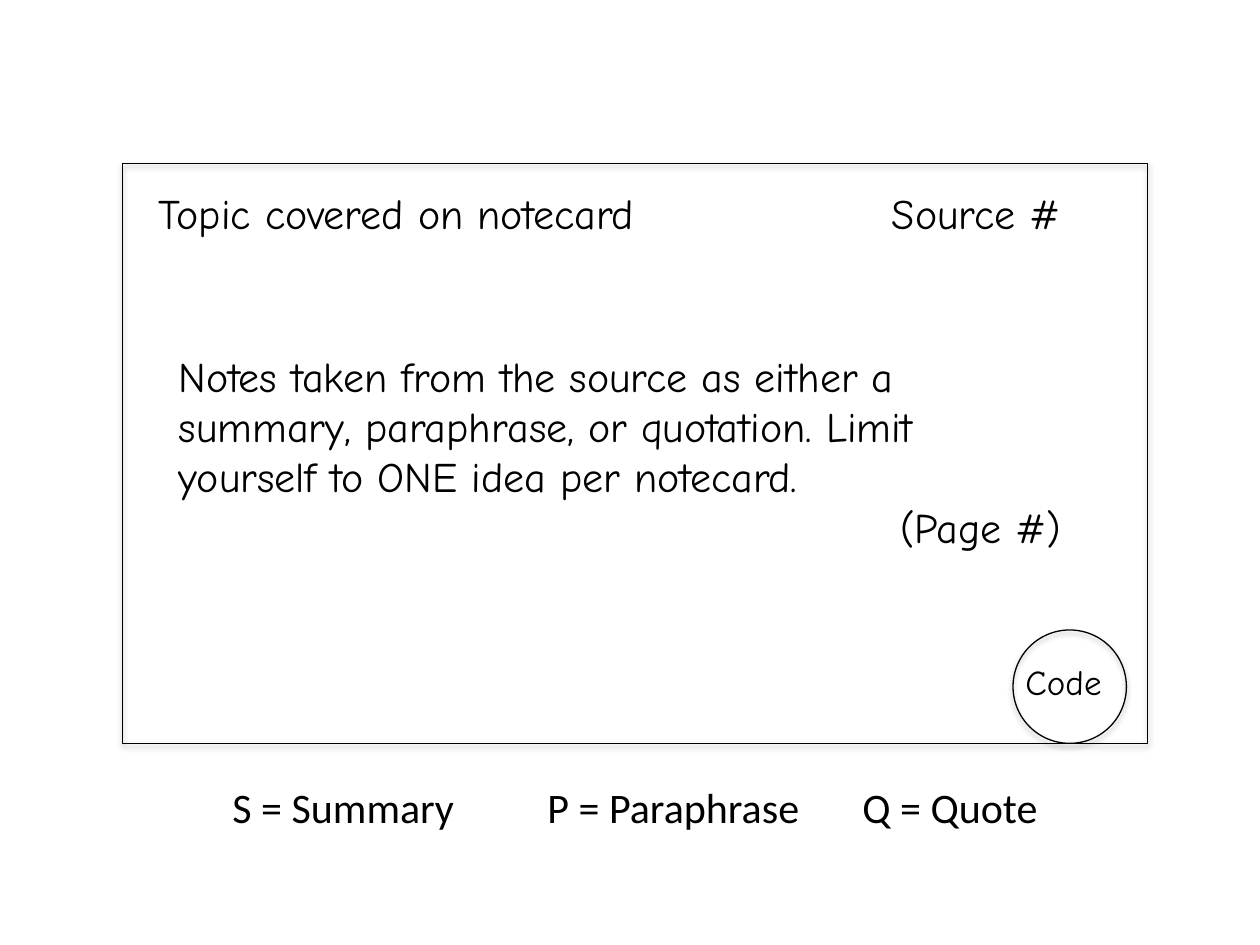
from dataclasses import dataclass

from lxml import etree
from pptx import Presentation
from pptx import util as u
from pptx.dml.color import RGBColor
from pptx.enum import shapes, text
from pptx.oxml import ns


@dataclass(frozen=True)
class Theme:
    ink: RGBColor = RGBColor(0, 0, 0)
    hand_font: str = "Comic Neue"
    legend_font: str = "Calibri"
    body_size: int = 24
    code_size: int = 20
    line_width: float = 0.75
    shadow_blur: float = 3.1
    shadow_distance: float = 1.8
    shadow_angle: int = 90
    shadow_opacity: int = 35


def write(p, words, *, font, size, color, align=text.PP_ALIGN.LEFT):
    p.alignment = align
    r = p.add_run()
    r.text = words
    r.font.name = font
    r.font.size = u.Pt(size)
    r.font.color.rgb = color


class NotecardSlide:
    def __init__(self, s, theme):
        self.s = s
        self.theme = theme

    def outline(self, kind, left, top, width, height):
        t = self.theme
        sp = self.s.shapes.add_shape(
            kind, u.Inches(left), u.Inches(top), u.Inches(width), u.Inches(height)
        )
        sp.fill.background()
        sp.line.color.rgb = t.ink
        sp.line.width = u.Pt(t.line_width)
        sp.shadow.inherit = False
        shadow = etree.SubElement(
            sp.element.spPr.find(ns.qn("a:effectLst")),
            ns.qn("a:outerShdw"),
            blurRad=str(u.Pt(t.shadow_blur)),
            dist=str(u.Pt(t.shadow_distance)),
            dir=str(t.shadow_angle * 60000),
            rotWithShape="0",
        )
        color = etree.SubElement(shadow, ns.qn("a:srgbClr"), val=str(t.ink))
        etree.SubElement(color, ns.qn("a:alpha"), val=str(t.shadow_opacity * 1000))

    def fill_text(self, sp, paragraphs, font=None, size=None):
        t = self.theme
        tf = sp.text_frame
        tf.word_wrap = True
        tf.vertical_anchor = text.MSO_ANCHOR.TOP
        for i, (words, align) in enumerate(paragraphs):
            p = tf.add_paragraph() if i else tf.paragraphs[0]
            write(p, words, font=font or t.hand_font, size=size or t.body_size,
                  color=t.ink, align=align)
        tf.auto_size = text.MSO_AUTO_SIZE.SHAPE_TO_FIT_TEXT

    def title(self, words, left, top, width, height):
        sp = self.s.shapes.title
        sp.left, sp.top = u.Inches(left), u.Inches(top)
        sp.width, sp.height = u.Inches(width), u.Inches(height)
        self.fill_text(sp, [(words, text.PP_ALIGN.LEFT)])

    def label(self, paragraphs, left, top, width, height, **style):
        sp = self.s.shapes.add_textbox(
            u.Inches(left), u.Inches(top), u.Inches(width), u.Inches(height)
        )
        self.fill_text(sp, paragraphs, **style)


def main():
    prs = Presentation()
    prs.slide_width, prs.slide_height = u.Inches(10), u.Inches(7.5)
    theme = Theme()
    card = NotecardSlide(prs.slides.add_slide(prs.slide_layouts[5]), theme)
    align = text.PP_ALIGN
    kinds = shapes.MSO_SHAPE

    card.outline(kinds.RECTANGLE, 0.97, 1.3, 8.14, 4.6)
    card.title("Topic covered on notecard", 1.16, 1.44, 4.72, 0.5)
    card.label([("Source #", align.LEFT)], 6.98, 1.44, 1.96, 0.5)
    notes = (
        "Notes taken from the source as either a summary, paraphrase, "
        "or quotation. Limit yourself to ONE idea per notecard."
    )
    card.label([(notes, align.LEFT), ("(Page #)", align.RIGHT)], 1.32, 2.73, 7.2, 1.72)
    card.label([("Code", align.LEFT)], 8.04, 5.19, 1.04, 0.44, size=theme.code_size)
    card.label(
        [("S = Summary\t\tP = Paraphrase\t\tQ = Quote", align.CENTER)],
        0.97, 6.15, 8.14, 0.5, font=theme.legend_font,
    )
    card.outline(kinds.OVAL, 8.04, 5, 0.9, 0.9)

    prs.save("out.pptx")


if __name__ == "__main__":
    main()
